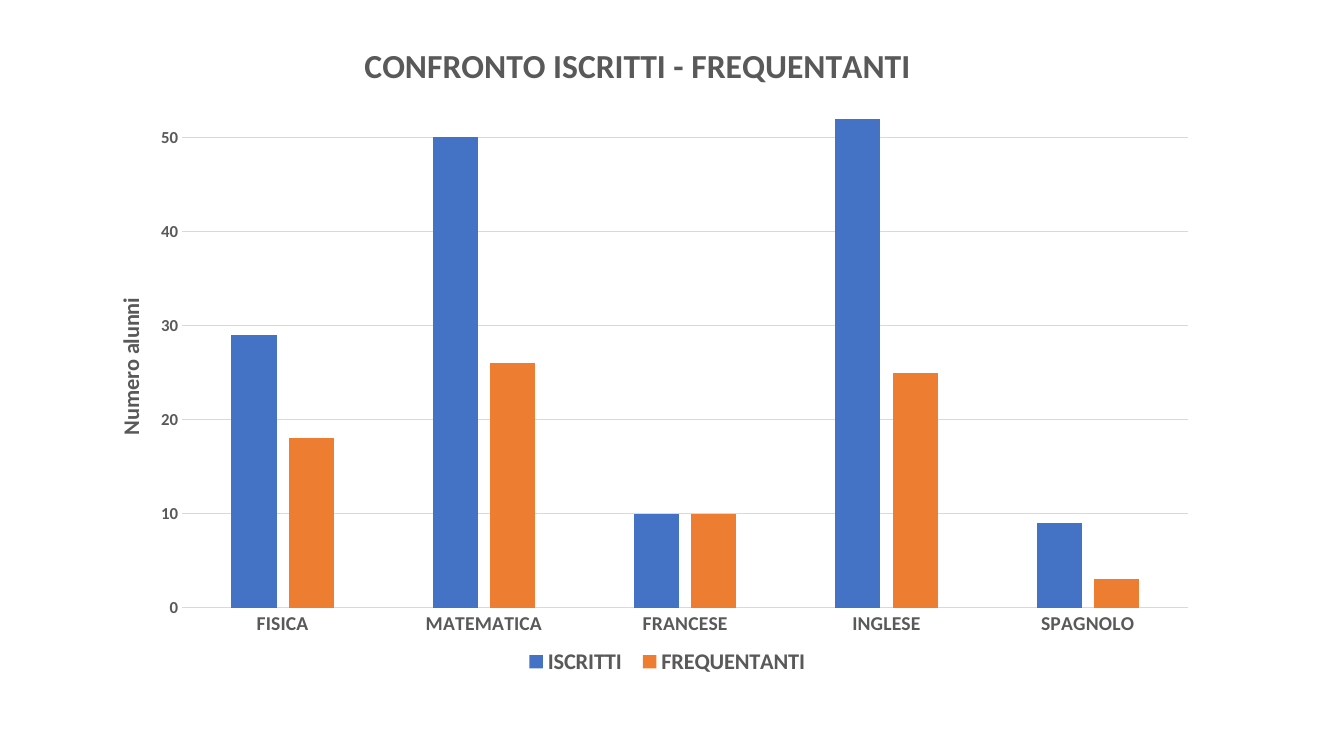
from lxml.etree import SubElement
from pptx import Presentation
from pptx.chart.data import CategoryChartData
from pptx.dml.color import RGBColor
from pptx.enum.chart import XL_CHART_TYPE as ChartType
from pptx.enum.chart import XL_LEGEND_POSITION as LegendPosition
from pptx.enum.chart import XL_TICK_MARK as TickMark
from pptx.oxml.ns import qn
from pptx.util import Inches, Pt

COLORS = {
    "text": "595959",
    "grid": "D9D9D9",
    "enrolled": "4472C4",
    "attending": "ED7D31",
}
FONT = "Calibri"
SUBJECTS = ["FISICA", "MATEMATICA", "FRANCESE", "INGLESE", "SPAGNOLO"]
SERIES = [
    ("ISCRITTI", [29, 50, 10, 52, 9], "enrolled"),
    ("FREQUENTANTI", [18, 26, 10, 25, 3], "attending"),
]


def color(name):
    return RGBColor.from_string(COLORS[name])


def style_font(font, size):
    font.name = FONT
    font.size = Pt(size)
    font.bold = True
    font.color.rgb = color("text")


def style_line(line):
    line.color.rgb = color("grid")
    line.width = Pt(0.75)


def set_title(title, text, size):
    para = title.text_frame.paragraphs[0]
    para.text = text
    style_font(para.font, size)


def place(element, after=None, inner=False, **fractions):
    """Position a chart part by fractions of the chart area."""
    for old in element.findall(qn("c:layout")):
        element.remove(old)
    layout = SubElement(element, qn("c:layout"))
    manual = SubElement(layout, qn("c:manualLayout"))
    if inner:
        SubElement(manual, qn("c:layoutTarget")).set("val", "inner")
    for key in ("x", "y"):
        SubElement(manual, qn(f"c:{key}Mode")).set("val", "edge")
    for key, value in fractions.items():
        SubElement(manual, qn(f"c:{key}")).set("val", str(value))
    if after:
        element.find(qn(after)).addnext(layout)
    else:
        element.insert(0, layout)


def add_column_chart(page):
    data = CategoryChartData()
    data.categories = SUBJECTS
    for name, values, _ in SERIES:
        data.add_series(name, values)
    frame = page.shapes.add_chart(
        ChartType.COLUMN_CLUSTERED,
        Inches(0.77), Inches(0.1), Inches(11.14), Inches(6.7), data)
    chart = frame.chart
    chart.font.name = FONT
    chart.font.size = Pt(10)

    plot = chart.plots[0]
    plot.vary_by_categories = False
    plot.gap_width = 219
    plot.overlap = -27
    for series, (_, _, fill_name) in zip(plot.series, SERIES):
        series.format.fill.solid()
        series.format.fill.fore_color.rgb = color(fill_name)
    return chart


def format_axes(chart):
    subjects, pupils = chart.category_axis, chart.value_axis
    for axis, size in ((subjects, 14), (pupils, 12)):
        axis.major_tick_mark = TickMark.NONE
        axis.minor_tick_mark = TickMark.NONE
        style_font(axis.tick_labels.font, size)
    style_line(subjects.format.line)

    pupils.minimum_scale = 0
    pupils.maximum_scale = 55
    pupils.major_unit = 10
    pupils.format.line.fill.background()
    pupils.has_major_gridlines = True
    style_line(pupils.major_gridlines.format.line)
    set_title(pupils.axis_title, "Numero alunni", 16)


def format_legend(chart):
    chart.has_legend = True
    chart.legend.position = LegendPosition.BOTTOM
    chart.legend.include_in_layout = False
    style_font(chart.legend.font, 16)


def arrange_parts(chart):
    root = chart._chartSpace
    title = root.find(".//" + qn("c:chart") + "/" + qn("c:title"))
    axis_title = root.find(".//" + qn("c:valAx") + "/" + qn("c:title"))
    legend = root.find(".//" + qn("c:legend"))
    plot_area = root.find(".//" + qn("c:plotArea"))
    place(title, after="c:tx", x=0.25, y=0.04)
    place(axis_title, after="c:tx", x=0.03, y=0.42)
    place(legend, after="c:legendPos", x=0.39, y=0.94, w=0.27, h=0.05)
    place(plot_area, inner=True, x=0.093, y=0.119, w=0.896, h=0.766)


def main():
    deck = Presentation()
    deck.slide_width = Inches(13.33)
    deck.slide_height = Inches(7.5)
    page = deck.slides.add_slide(deck.slide_layouts[6])

    # Chart with its title, axes and legend
    chart = add_column_chart(page)
    chart.has_title = True
    set_title(chart.chart_title, "CONFRONTO ISCRITTI - FREQUENTANTI", 24)
    format_axes(chart)
    format_legend(chart)
    arrange_parts(chart)

    deck.save("out.pptx")


if __name__ == "__main__":
    main()
